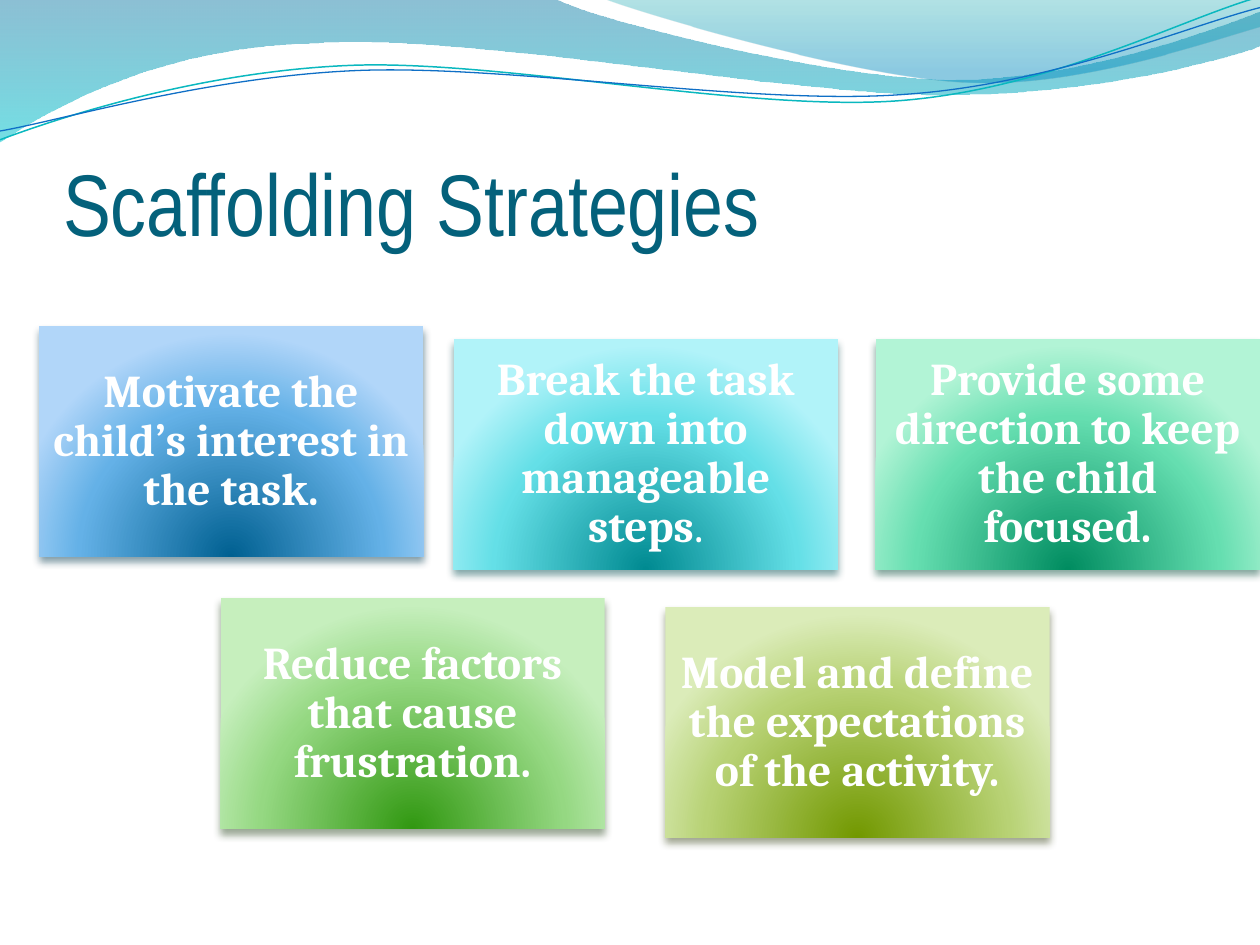
from dataclasses import dataclass
from math import cos, radians, sin

from lxml.etree import SubElement as Sub
from pptx import Presentation
from pptx.dml.color import RGBColor as RGB
from pptx.enum.shapes import MSO_SHAPE as Shape
from pptx.enum.text import MSO_ANCHOR as Anchor, MSO_AUTO_SIZE as Auto, PP_ALIGN as Align
from pptx.oxml.ns import qn
from pptx.util import Inches, Pt


@dataclass(frozen=True)
class Theme:
    head: str = "04617B"
    text: str = "FFFFFF"
    teal: str = "0AB8BF"
    blue: str = "0F6FC6"
    head_font: str = "Arial Narrow"
    body_font: str = "Cambria"
    head_size: int = 50
    body_size: int = 26
    # Gradient stops: position, colour, opacity
    band: tuple = ((0, "0074A1", 45), (100, "00C6CF", 55))
    crest: tuple = ((0, "00A1A9", 30), (80, "008BBF", 45))
    # Card colours: centre, middle, edge, shadow
    cards: tuple = (
        ("006091", "64B1E7", "B1D6F9", "00374C"),
        ("008A91", "64DFE7", "B1F3F9", "024B4E"),
        ("008C60", "65DEB0", "B2F4D6", "044A37"),
        ("319811", "95D882", "C6EFBD", "2B4821"),
        ("729800", "B8D275", "DBECB9", "3A4519"),
    )


THEME = Theme()
CARD_W, CARD_H = 3.05, 1.83
TURN = 357.3

# Wave outlines in inches: one point is a line, three are a curve
BAND = [[(0, 0)], [(4.4, -0.01)],
        [(4.76, 0.17), (6.64, 0.63), (7.58, 0.63)],
        [(8.53, 0.63), (9.58, 0.26), (10, 0.09)], [(10.01, 0.36)],
        [(9.83, 0.44), (8.7, 0.76), (7.46, 0.75)],
        [(6.22, 0.75), (3.82, 0.28), (2.57, 0.34)],
        [(1.29, 0.36), (0.46, 0.83), (-0.01, 1.13)], [(0, 0)]]
CREST = [[(4.79, -0.01)],
         [(5.09, 0.11), (6.82, 0.62), (7.69, 0.65)],
         [(8.56, 0.69), (9.61, 0.32), (10, 0.21)], [(10, 0)], [(4.79, -0.01)]]
TEAL = [[(0, 1.11)],
        [(0.48, 0.93), (1.58, 0.57), (2.77, 0.52)],
        [(3.95, 0.47), (5.93, 0.89), (7.13, 0.8)],
        [(8.33, 0.71), (9.38, 0.15), (9.98, -0.02)]]
BLUE = [[(0, 1.04)],
        [(0.47, 0.96), (1.64, 0.61), (2.83, 0.56)],
        [(4.03, 0.51), (5.97, 0.84), (7.17, 0.75)],
        [(8.36, 0.67), (9.41, 0.21), (10, 0.06)]]

CARDS = [
    (0.31, 2.59, "Motivate the child’s interest in the task.", ""),
    (3.6, 2.69, "Break the task down into manageable steps", "."),
    (6.95, 2.69, "Provide some direction to keep the child focused.", ""),
    (1.75, 4.75, "Reduce factors that cause frustration.", ""),
    (5.28, 4.82, "Model and define the expectations of the activity.", ""),
]


def apply(obj, **style):
    for name, value in style.items():
        setattr(obj, name, value)


def place(shape, left, top, width, height):
    apply(shape, left=Inches(left), top=Inches(top),
          width=Inches(width), height=Inches(height))


def tint(parent, color, alpha):
    node = Sub(parent, qn("a:srgbClr"), val=color)
    if alpha < 100:
        Sub(node, qn("a:alpha"), val=str(alpha * 1000))


def shade(shape, stops, round_fill=False):
    """Fill with a gradient that runs down, or out from below the base."""
    shape.fill.gradient()
    grad = shape._element.spPr.find(qn("a:gradFill"))
    grad.clear()
    grad.set("rotWithShape", "1")
    items = Sub(grad, qn("a:gsLst"))
    for pos, color, alpha in stops:
        tint(Sub(items, qn("a:gs"), pos=str(pos * 1000)), color, alpha)
    if round_fill:
        path = Sub(grad, qn("a:path"), path="circle")
        Sub(path, qn("a:fillToRect"), l="50000", t="130000", r="50000", b="-30000")
    else:
        Sub(grad, qn("a:lin"), ang="5400000", scaled="0")


def add_wave(slide, box, steps, turn=0):
    """Draw true curves in a box; a turned box gets its points turned back."""
    left, top, width, height = box
    mid_x, mid_y = left + width / 2, top + height / 2
    c, s = cos(radians(turn)), sin(radians(turn))

    def local(point):
        x, y = point[0] - mid_x, point[1] - mid_y
        return (Inches(x * c + y * s + width / 2),
                Inches(y * c - x * s + height / 2))

    ends = [local(step[-1]) for step in steps]
    pen = slide.shapes.build_freeform(*ends[0])
    pen.add_line_segments(ends[1:], close=False)
    wave = pen.convert_to_shape()
    place(wave, *box)
    apply(wave, rotation=turn)
    wave.shadow.inherit = False
    # Curved outline
    trace = next(wave._element.spPr.iter(qn("a:path")))
    trace.clear()
    apply(trace, w=Inches(width), h=Inches(height))
    for i, step in enumerate(steps):
        kind = "moveTo" if i == 0 else "lnTo" if len(step) == 1 else "cubicBezTo"
        node = Sub(trace, qn(f"a:{kind}"))
        for x, y in map(local, step):
            Sub(node, qn("a:pt"), x=str(x), y=str(y))
    if steps[0] == steps[-1]:
        Sub(trace, qn("a:close"))
    return wave


def add_waves(slide, left, top):
    # Shaded bands
    for x, y, w, h, steps, stops in (
            (-0.01, -0.01, 10.02, 1.14, BAND, THEME.band),
            (4.79, -0.01, 5.21, 0.7, CREST, THEME.crest)):
        wave = add_wave(slide, (left + x, top + y, w, h), steps)
        shade(wave, stops)
        wave.line.fill.background()
    # Thin lines
    for x, y, w, h, steps, color, size in (
            (-0.02, 0.22, 10.02, 0.71, TEAL, THEME.teal, 0.85),
            (-0.02, 0.3, 10.03, 0.58, BLUE, THEME.blue, 0.75)):
        wave = add_wave(slide, (left + x, top + y, w, h), steps, TURN)
        wave.fill.background()
        wave.line.color.rgb = RGB.from_string(color)
        wave.line.width = Pt(size)


def add_run(para, text, font, size, color, bold):
    run = para.add_run()
    run.text = text
    apply(run.font, name=font, size=Pt(size), bold=bold)
    run.font.color.rgb = RGB.from_string(color)


def add_title(slide, *box):
    title = slide.shapes.title
    place(title, *box)
    frame = title.text_frame
    apply(frame, auto_size=Auto.NONE, word_wrap=True, vertical_anchor=Anchor.BOTTOM,
          margin_left=0, margin_top=Inches(0.05), margin_right=0, margin_bottom=0)
    para = frame.paragraphs[0]
    para.alignment = Align.LEFT
    add_run(para, "Scaffolding Strategies", THEME.head_font, THEME.head_size,
            THEME.head, False)


def add_card(slide, left, top, text, tail, colors):
    card = slide.shapes.add_shape(Shape.RECTANGLE, Inches(left), Inches(top),
                                  Inches(CARD_W), Inches(CARD_H))
    *fills, dark = colors
    shade(card, [(pos, c, 100) for pos, c in zip((0, 68, 100), fills)], True)
    card.line.fill.background()
    # Soft shadow below
    card.shadow.inherit = False
    effects = card._element.spPr.find(qn("a:effectLst"))
    drop = Sub(effects, qn("a:outerShdw"), blurRad=str(Pt(4.5)), dist=str(Pt(3)),
               dir="5400000", rotWithShape="0")
    tint(drop, dark, 48)
    # Label
    frame = card.text_frame
    apply(frame, word_wrap=True, vertical_anchor=Anchor.MIDDLE)
    apply(frame, **{f"margin_{side}": Inches(0.11)
                    for side in ("left", "top", "right", "bottom")})
    para = frame.paragraphs[0]
    apply(para, alignment=Align.CENTER, line_spacing=0.9)
    for part, bold in ((text, True), (tail, False)):
        if part:
            add_run(para, part, THEME.body_font, THEME.body_size, THEME.text, bold)


def main():
    deck = Presentation()
    apply(deck, slide_width=Inches(10), slide_height=Inches(7.5))
    slide = deck.slides.add_slide(deck.slide_layouts[5])
    add_waves(slide, 0, 0)
    for card, colors in zip(CARDS, THEME.cards):
        add_card(slide, *card, colors)
    add_title(slide, 0.5, 0.77, 9, 1.25)
    deck.save("out.pptx")


if __name__ == "__main__":
    main()
